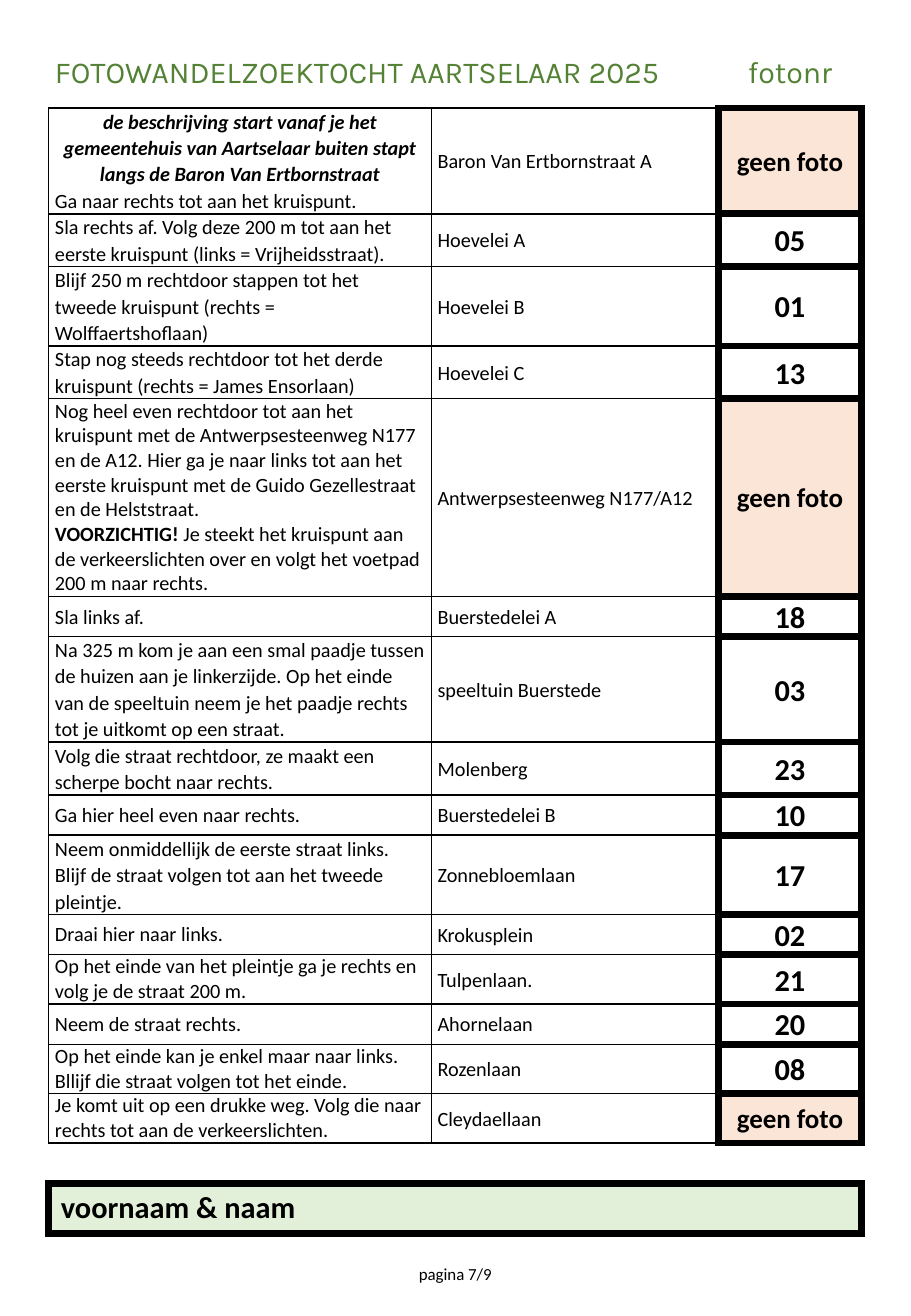
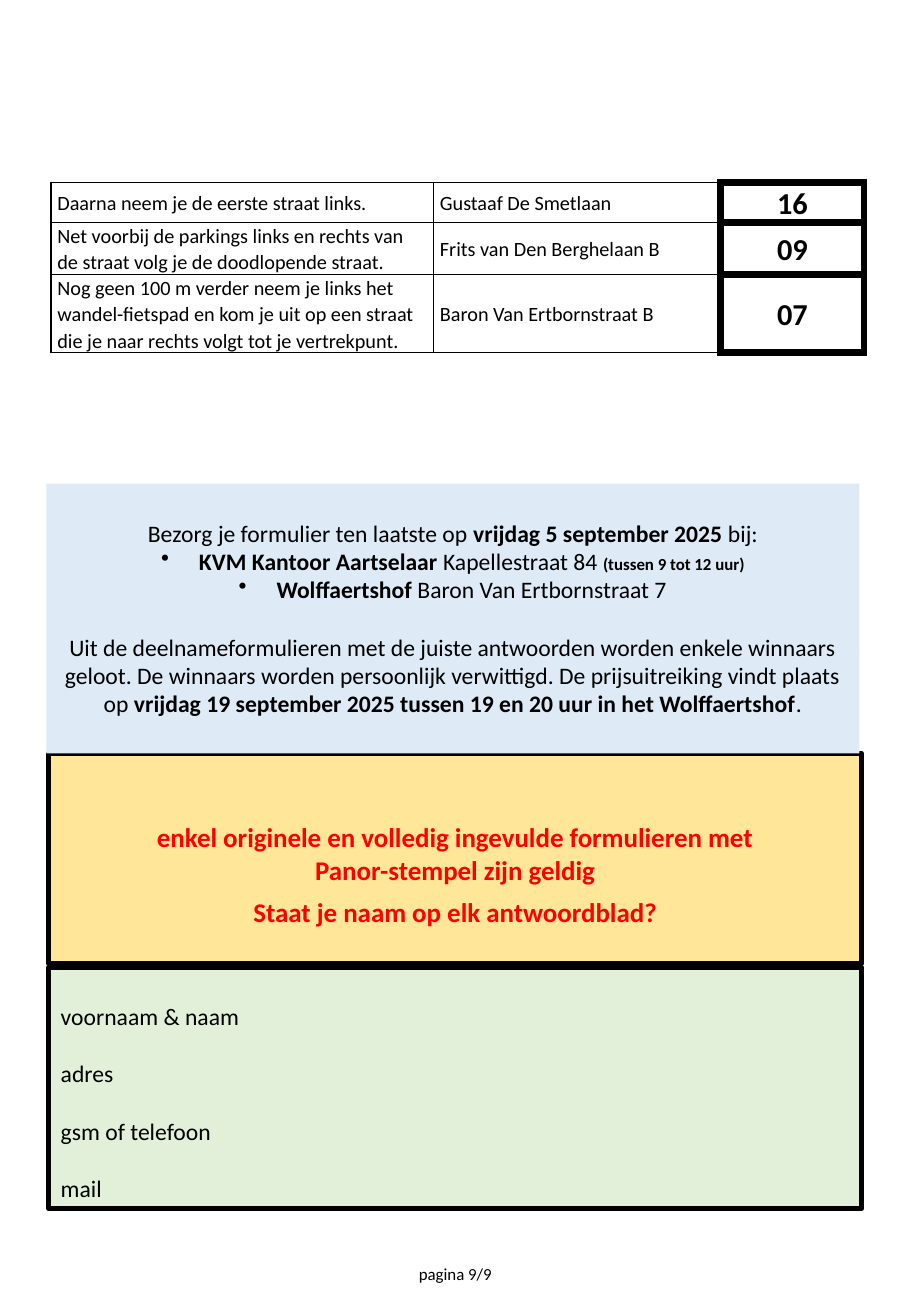
from pptx import Presentation
from pptx.dml.color import RGBColor
from pptx.enum import shapes, text
from pptx.oxml import parse_xml
from pptx.oxml.ns import nsdecls
from pptx.util import Cm, Pt

HUE = dict(ink="000000", title="548235", peach="FBE5D6", mint="E2F0D9",
           gold="FFE699", sky="DEEBF7", red="FF0000")
MID = text.PP_ALIGN.CENTER
NONE = "geen foto"
THIN, THICK = 1, 4.5
COLS = [8, 6, 3]
LEFT, WIDE = 1.02, sum(COLS)
HEAD_H, ROW_H = 1.5, 0.84
LOOSE, TIGHT = 1.07, 1

TITLE = "FOTOWANDELZOEKTOCHT AARTSELAAR 2025", "fotonr"
INTRO = ("de beschrijving start vanaf je het gemeentehuis van Aartselaar buiten "
         "stapt langs de Baron Van Ertbornstraat",
         dict(align=MID, bold=True, italic=True))
ROUTE = [
    ([INTRO, "Ga naar rechts tot aan het kruispunt."],
     "Baron Van Ertbornstraat A", NONE, LOOSE),
    (["Sla rechts af. Volg deze 200 m tot aan het eerste kruispunt (links = Vrijheidsstraat)."],
     "Hoevelei A", "05", LOOSE),
    (["Blijf 250 m rechtdoor stappen tot het tweede kruispunt (rechts = Wolffaertshoflaan)"],
     "Hoevelei B", "01", LOOSE),
    (["Stap nog steeds rechtdoor tot het derde kruispunt (rechts = James Ensorlaan)"],
     "Hoevelei C", "13", LOOSE),
    (["Nog heel even rechtdoor tot aan het kruispunt met de Antwerpsesteenweg N177 "
      "en de A12. Hier ga je naar links tot aan het",
      "eerste kruispunt met de Guido Gezellestraat en de Helststraat.",
      "**VOORZICHTIG! **Je steekt het kruispunt aan de verkeerslichten over en volgt "
      "het voetpad 200 m naar rechts."],
     "Antwerpsesteenweg N177/A12", NONE, TIGHT),
    (["Sla links af."], "Buerstedelei A", "18", LOOSE),
    (["Na 325 m kom je aan een smal paadje tussen de huizen aan je linkerzijde. Op het "
      "einde van de speeltuin neem je het paadje rechts tot je uitkomt op een straat."],
     "speeltuin Buerstede", "03", LOOSE),
    (["Volg die straat rechtdoor, ze maakt een scherpe bocht naar rechts."],
     "Molenberg", "23", LOOSE),
    (["Ga hier heel even naar rechts."], "Buerstedelei B", "10", LOOSE),
    (["Neem onmiddellijk de eerste straat links. Blijf de straat volgen tot aan het "
      "tweede pleintje."], "Zonnebloemlaan", "17", LOOSE),
    (["Draai hier naar links."], "Krokusplein", "02", TIGHT),
    (["Op het einde van het pleintje ga je rechts en volg je de straat 200 m."],
     "Tulpenlaan.", "21", TIGHT),
    (["Neem de straat rechts."], "Ahornelaan", "20", TIGHT),
    (["Op het einde kan je enkel maar naar links. Bllijf die straat volgen tot het einde."],
     "Rozenlaan", "08", TIGHT),
    (["Je komt uit op een drukke weg. Volg die naar rechts tot aan de verkeerslichten."],
     "Cleydaellaan", NONE, TIGHT),
]
FINISH = [
    (["Daarna neem je de eerste straat links."], "Gustaaf De Smetlaan", "16", LOOSE),
    (["Net voorbij de parkings links en rechts van de straat volg je de doodlopende straat."],
     "Frits van Den Berghelaan B", "09", LOOSE),
    (["Nog geen 100 m verder neem je links het wandel-fietspad en kom je uit op een "
      "straat die je naar rechts volgt tot je vertrekpunt."],
     "Baron Van Ertbornstraat B", "07", LOOSE),
]
NAME = "voornaam & naam"
GAP = 17.1
RULES = [
    "enkel originele en volledig ingevulde formulieren met",
    "Panor-stempel zijn geldig",
    ("Staat je naam op elk antwoordblad?", dict(before=6)),
]
FORM = [NAME] + [(field, dict(before=GAP)) for field in ("adres", "gsm of telefoon", "mail")]
HAND_IN = [
    "Bezorg je formulier ten laatste op **vrijdag 5 september 2025 **bij:",
    ("**KVM Kantoor Aartselaar **Kapellestraat 84 ",
     dict(bullet=True, small="(tussen 9 tot 12 uur)")),
    ("**Wolffaertshof **Baron Van Ertbornstraat 7", dict(bullet=True)),
    ("Uit de deelnameformulieren met de juiste antwoorden worden enkele winnaars geloot. "
     "De winnaars worden persoonlijk verwittigd. De prijsuitreiking vindt plaats op "
     "**vrijdag 19 september 2025 tussen 19 en 20 uur in het Wolffaertshof**.",
     dict(before=GAP)),
]
BOXES = [
    (LEFT, 15.75, 4.39, "gold", True, 1.41, RULES,
     dict(size=16, align=MID, bold=True, color="red")),
    (LEFT, 20.22, 5.05, "mint", True, 0.73, FORM, dict(size=14)),
    (0.97, 10.11, 5.64, "sky", False, 0.73, HAND_IN, dict(size=14, align=MID)),
]


def rgb(key):
    return RGBColor.from_string(HUE[key])


def para(p, words, size=12, color="ink", face="Calibri", bold=None, italic=None,
         align=None, lead=None, before=None, bullet=False, small=None):
    font = p.font
    font.name, font.size, font.bold, font.italic = face, Pt(size), bold, italic
    font.color.rgb = rgb(color)
    p.alignment = align
    if lead:
        p.line_spacing = lead
    if before:
        p.space_before = Pt(before)
    if bullet:
        props = p._p.get_or_add_pPr()
        props.set("marL", str(Cm(0.79)))
        props.set("indent", str(-Cm(0.79)))
        mark = parse_xml(f'<a:buChar {nsdecls("a")} char="•"/>')
        props.insert(list(props).index(props.find(
            "{http://schemas.openxmlformats.org/drawingml/2006/main}defRPr")), mark)
    for i, part in enumerate(words.split("**")):
        if part:
            run = p.add_run()
            run.text = part
            if i % 2:
                run.font.bold = True
    if small:
        run = p.add_run()
        run.text = small
        run.font.size, run.font.bold = Pt(10), True


def write(frame, items, **base):
    frame.word_wrap = True
    for i, item in enumerate(items):
        words, more = (item, {}) if isinstance(item, str) else item
        p = frame.add_paragraph() if i else frame.paragraphs[0]
        para(p, words, **{**base, **more})


def edge(cell, left, right, top, bottom):
    props = cell._tc.get_or_add_tcPr()
    for side, width in zip("LRTB", (left, right, top, bottom)):
        paint = (f'<a:solidFill><a:srgbClr val="{HUE["ink"]}"/></a:solidFill>'
                 if width else "<a:noFill/>")
        props.append(parse_xml(
            f'<a:ln{side} {nsdecls("a")} w="{Pt(width)}">{paint}</a:ln{side}>'))


def dress(cell, edges, tint=None):
    edge(cell, *edges)
    if tint:
        cell.fill.solid()
        cell.fill.fore_color.rgb = rgb(tint)
    else:
        cell.fill.background()


def snug(cell):
    cell.margin_left = cell.margin_right = Cm(0.13)
    cell.margin_top = cell.margin_bottom = 0
    cell.vertical_anchor = text.MSO_ANCHOR.MIDDLE


def grid(slide, x, y, cols, rows):
    table = slide.shapes.add_table(len(rows), len(cols), Cm(x), Cm(y),
                                   Cm(sum(cols)), Cm(sum(rows))).table
    table.first_row = table.horz_banding = False
    for col, width in zip(table.columns, cols):
        col.width = Cm(width)
    for row, height in zip(table.rows, rows):
        row.height = Cm(height)
    return table


def steps(slide, x, y, route, title=None):
    skip = 1 if title else 0
    table = grid(slide, x, y, COLS, [HEAD_H] * skip + [ROW_H] * len(route))
    if title:
        cells = [table.cell(0, c) for c in range(3)]
        cells[0].merge(cells[1])
        for cell, low in zip(cells, (THIN, THIN, THICK)):
            snug(cell)
            dress(cell, (0, 0, 0, low))
        look = dict(size=18, color="title", face="Karla", lead=LOOSE)
        write(cells[0].text_frame, title[:1], **look)
        write(cells[2].text_frame, title[1:], align=MID, **look)
    for r, (tell, place, code, lead) in enumerate(route, skip):
        blank = code == NONE
        marks = [
            (tell, dict(lead=lead), (THIN,) * 4, None),
            ([place], dict(lead=LOOSE), (THIN, THICK, THIN, THIN), None),
            ([code], dict(size=16 if blank else 18, bold=True, align=MID, lead=LOOSE),
             (THICK,) * 4, "peach" if blank else None),
        ]
        for c, (items, look, edges, tint) in enumerate(marks):
            cell = table.cell(r, c)
            snug(cell)
            dress(cell, edges, tint)
            write(cell.text_frame, items, **look)


def box(slide, x, y, high, tint, lined, inset, items, look):
    shape = slide.shapes.add_shape(shapes.MSO_SHAPE.RECTANGLE,
                                   Cm(x), Cm(y), Cm(WIDE), Cm(high))
    shape.shadow.inherit = False
    shape.fill.solid()
    shape.fill.fore_color.rgb = rgb(tint)
    if lined:
        shape.line.color.rgb = rgb("ink")
        shape.line.width = Pt(3)
    else:
        shape.line.fill.background()
    frame = shape.text_frame
    frame.vertical_anchor = text.MSO_ANCHOR.TOP
    frame.margin_top = Cm(inset)
    write(frame, items, **{"align": text.PP_ALIGN.LEFT, **look})


def foot(slide, page):
    note = slide.shapes.add_textbox(Cm(7.77), Cm(26.29), Cm(3.5), Cm(0.69))
    write(note.text_frame, [f"pagina {page}/9"], size=10, align=MID)


def main():
    deck = Presentation()
    deck.slide_width, deck.slide_height = Cm(19.05), Cm(27.51)
    walk, entry = [deck.slides.add_slide(deck.slide_layouts[6]) for _ in range(2)]

    steps(walk, LEFT, 0.76, ROUTE, TITLE)
    cell = grid(walk, LEFT, 24.74, [WIDE], [1.04]).cell(0, 0)
    dress(cell, (THICK,) * 4, "mint")
    write(cell.text_frame, [NAME], size=18, bold=True)
    foot(walk, 7)

    for part in BOXES:
        box(entry, *part)
    steps(entry, 1.07, 3.81, FINISH)
    foot(entry, 9)
    deck.save("out.pptx")


if __name__ == "__main__":
    main()
